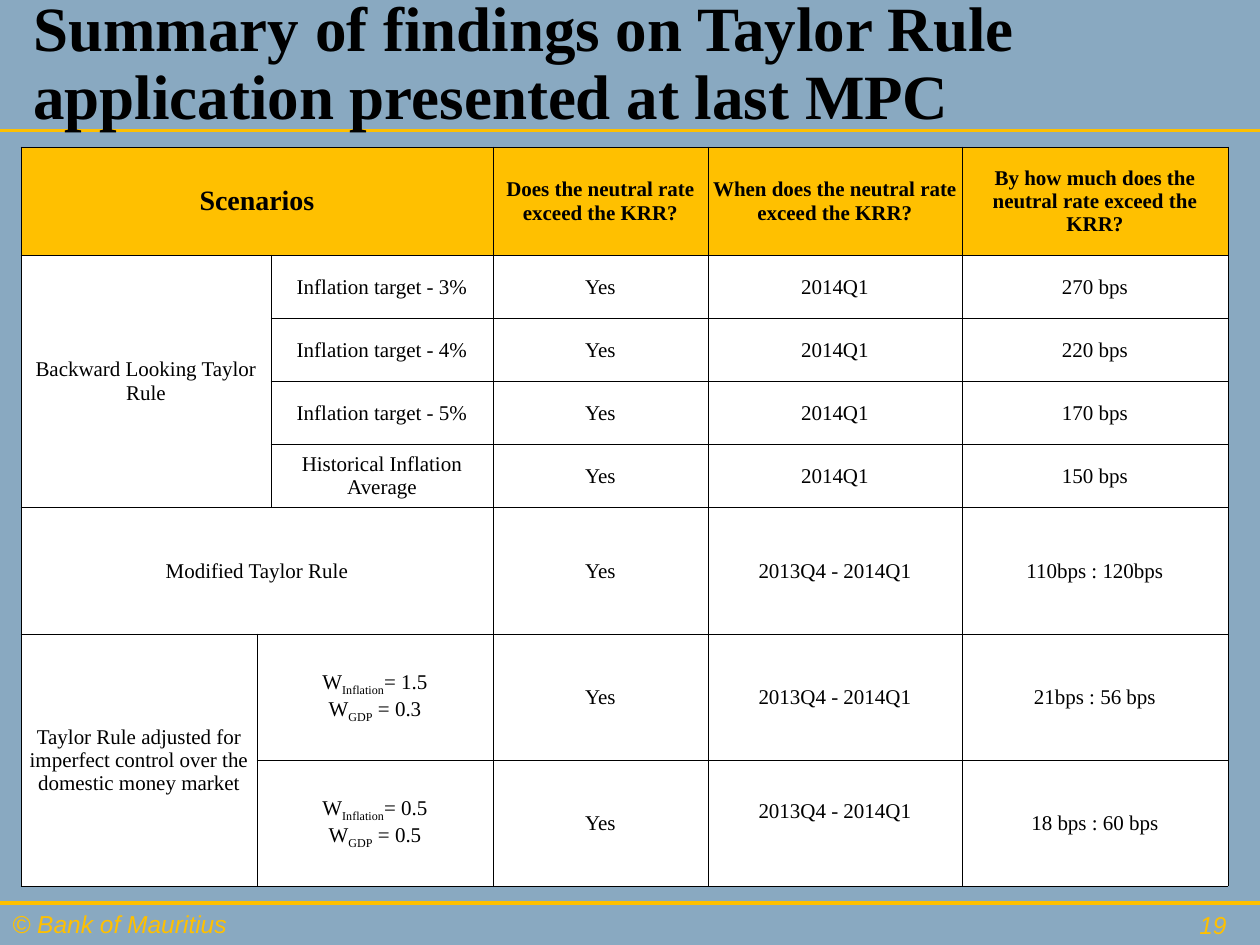
from lxml import etree
from pptx import Presentation, util as u
from pptx.dml.color import RGBColor
from pptx.enum import shapes, text
from pptx.oxml import ns

PX_PER_INCH = 126
WIDTH, HEIGHT = 1260, 945
BLUE = RGBColor(0x89, 0xA9, 0xC1)
GOLD = RGBColor(0xFF, 0xC0, 0x00)
BLACK = RGBColor(0, 0, 0)
WHITE = RGBColor(0xFF, 0xFF, 0xFF)
SERIF, SANS = "Times New Roman", "Arial"
CENTER, RIGHT, LEFT = text.PP_ALIGN.CENTER, text.PP_ALIGN.RIGHT, text.PP_ALIGN.LEFT
MIDDLE, TOP = text.MSO_ANCHOR.MIDDLE, text.MSO_ANCHOR.TOP

COLUMNS = [236, 14, 222, 215, 254, 266]
ROWS = [108, 63, 63, 63, 63, 127, 126, 126]
MERGES = [(0, 0, 0, 2), (1, 0, 4, 1), (5, 0, 5, 2), (6, 0, 7, 0), (6, 1, 6, 2), (7, 1, 7, 2)]


def px(length):
    """Turn pixels into EMU."""
    return u.Emu(round(length * u.Inches(1) / PX_PER_INCH))


def weights(inflation, gdp):
    """Return the two weight lines as (run text, is subscript) pairs."""
    return [
        [("W", False), ("Inflation", True), (f"= {inflation}", False)],
        [("W", False), ("GDP", True), (f" = {gdp}", False)],
    ]


FINDINGS = [
    ["Scenarios", None, None, "Does the neutral rate exceed the KRR?",
     "When does the neutral rate exceed the KRR?", "By how much does the neutral rate exceed the KRR?"],
    ["Backward Looking Taylor Rule", None, "Inflation target - 3%", "Yes", "2014Q1", "270 bps"],
    [None, None, "Inflation target - 4%", "Yes", "2014Q1", "220 bps"],
    [None, None, "Inflation target - 5%", "Yes", "2014Q1", "170 bps"],
    [None, None, "Historical Inflation Average", "Yes", "2014Q1", "150 bps"],
    ["Modified Taylor Rule", None, None, "Yes", "2013Q4 - 2014Q1", "110bps : 120bps"],
    ["Taylor Rule adjusted for imperfect control over the domestic money market",
     weights("1.5", "0.3"), None, "Yes", "2013Q4 - 2014Q1", "21bps : 56 bps"],
    [None, weights("0.5", "0.5"), None, "Yes", "2013Q4 - 2014Q1", "18 bps : 60 bps"],
]


def add_run(paragraph, content, size, name=SERIF, color=BLACK, bold=False, italic=False, subscript=False):
    """Append one formatted run to a paragraph."""
    run = paragraph.add_run()
    run.text = content
    font = run.font
    font.size, font.name, font.bold, font.italic = u.Pt(size), name, bold, italic
    font.color.rgb = color
    if subscript:
        font._element.set("baseline", "-25000")


def add_text(slide, box, content, size, anchor=TOP, align=LEFT, spacing=None, **style):
    """Place a wrapped one-paragraph text box."""
    frame = slide.shapes.add_textbox(*map(px, box)).text_frame
    frame.word_wrap = True
    frame.vertical_anchor = anchor
    paragraph = frame.paragraphs[0]
    paragraph.alignment = align
    paragraph.line_spacing = spacing
    add_run(paragraph, content, size, **style)


def add_rule(slide, left, top, width):
    """Draw a gold line from right to left."""
    rule = slide.shapes.add_connector(
        shapes.MSO_CONNECTOR.STRAIGHT, px(left + width), px(top), px(left), px(top))
    rule.line.color.rgb = GOLD
    rule.line.width = u.Pt(1.75)
    etree.SubElement(rule._element.spPr, ns.qn("a:effectLst"))


def add_header(slide, left, top, width, height):
    """Place the title and the rule along the bottom of its box."""
    add_rule(slide, left, top + height, width)
    add_text(slide, (left + 21, top, 1071, height), "Summary of findings on Taylor Rule application presented at last MPC",
             36, anchor=MIDDLE, spacing=0.9, bold=True)


def add_footer(slide, left, top, width, height):
    """Place the rule, the copyright line and the page number."""
    add_rule(slide, left, top, width)
    style = dict(size=14, name=SANS, color=GOLD, italic=True)
    add_text(slide, (left, top, 451, height), "© Bank of Mauritius", **style)
    add_text(slide, (left + width - 305, top, 284, height), "19", anchor=MIDDLE, align=RIGHT, **style)


def style_cell(cell, fill):
    """Give a cell thin black borders, a fill and tight margins."""
    properties = cell._tc.get_or_add_tcPr()
    for side in ("lnL", "lnR", "lnT", "lnB"):
        border = etree.SubElement(properties, ns.qn(f"a:{side}"), w=str(u.Pt(0.5)))
        solid = etree.SubElement(border, ns.qn("a:solidFill"))
        etree.SubElement(solid, ns.qn("a:srgbClr"), val=str(BLACK))
    cell.fill.solid()
    cell.fill.fore_color.rgb = fill
    cell.vertical_anchor = MIDDLE
    cell.margin_left = cell.margin_right = cell.margin_top = px(1)
    cell.margin_bottom = 0


def fill_cell(cell, content, size, bold):
    """Write centred paragraphs into a cell."""
    lines = [[(content, False)]] if isinstance(content, str) else content
    for index, line in enumerate(lines):
        frame = cell.text_frame
        paragraph = frame.add_paragraph() if index else frame.paragraphs[0]
        paragraph.alignment = CENTER
        for words, subscript in line:
            add_run(paragraph, words, size, bold=bold, subscript=subscript)


def add_findings(slide, left, top):
    """Place the table of findings."""
    box = (left, top, sum(COLUMNS), sum(ROWS))
    table = slide.shapes.add_table(len(ROWS), len(COLUMNS), *map(px, box)).table
    for column, width in zip(table.columns, COLUMNS):
        column.width = px(width)
    for row, height in zip(table.rows, ROWS):
        row.height = px(height)
    for row, contents in enumerate(FINDINGS):
        for column, content in enumerate(contents):
            cell = table.cell(row, column)
            style_cell(cell, WHITE if row else GOLD)
            if content:
                fill_cell(cell, content, 16 if row == column == 0 else 12, bold=row == 0)
    for first_row, first_column, last_row, last_column in MERGES:
        table.cell(first_row, first_column).merge(table.cell(last_row, last_column))
    table.cell(7, 4).margin_bottom = px(24)


def main():
    """Build the slide and save it."""
    presentation = Presentation()
    presentation.slide_width, presentation.slide_height = px(WIDTH), px(HEIGHT)
    slide = presentation.slides.add_slide(presentation.slide_layouts[6])
    slide.background.fill.solid()
    slide.background.fill.fore_color.rgb = BLUE
    add_header(slide, 0, 0, WIDTH, 131)
    add_footer(slide, 0, 903, WIDTH, 43)
    add_findings(slide, 21, 147)
    presentation.save("out.pptx")


if __name__ == "__main__":
    main()
